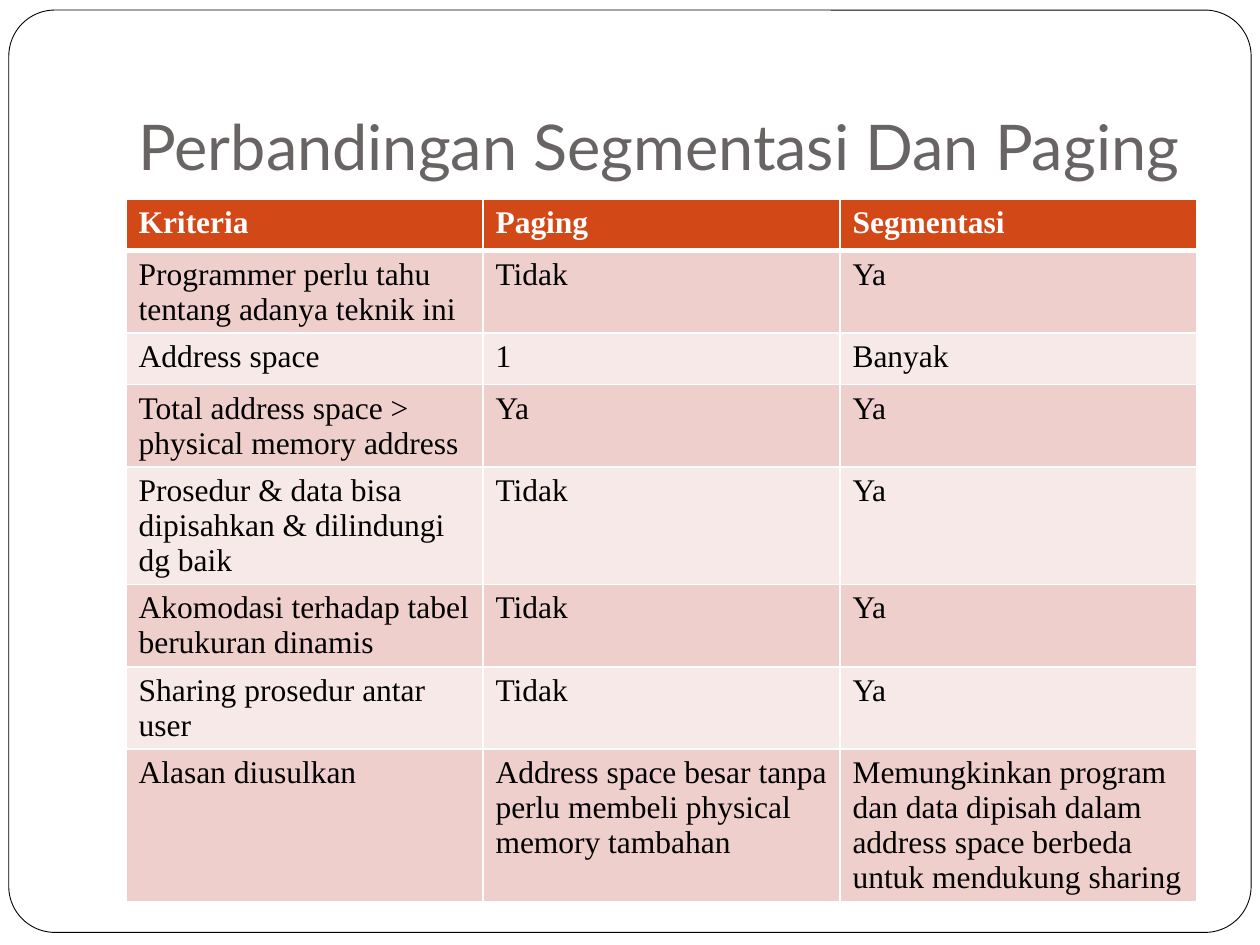
from dataclasses import dataclass

import lxml.etree
import pptx
import pptx.dml.color
import pptx.enum.shapes
import pptx.enum.text
import pptx.oxml.ns
import pptx.util
from pptx.util import Inches


@dataclass(frozen=True)
class Theme:
    paper: str = "FFFFFF"
    ink: str = "000000"
    heading: str = "696464"
    header_fill: str = "D34817"
    bands: tuple[str, str] = ("EFCFCC", "F7E9E8")
    title_font: str = "Lato"
    table_font: str = "Times New Roman"
    title_size: float = 36
    table_size: float = 18
    frame_line: float = 0.5
    rule: float = 1
    header_rule: float = 3


@dataclass(frozen=True)
class Criterion:
    name: str
    paging: str
    segmentation: str


@dataclass(frozen=True)
class CellStyle:
    fill: str
    ink: str
    bold: bool
    top_rule: float
    bottom_rule: float


THEME = Theme()
HEADER = Criterion("Kriteria", "Paging", "Segmentasi")
CRITERIA = [
    Criterion("Programmer perlu tahu tentang adanya teknik ini", "Tidak", "Ya"),
    Criterion("Address space", "1", "Banyak"),
    Criterion("Total address space > physical memory address", "Ya", "Ya"),
    Criterion("Prosedur & data bisa dipisahkan & dilindungi dg baik", "Tidak", "Ya"),
    Criterion("Akomodasi terhadap tabel berukuran dinamis", "Tidak", "Ya"),
    Criterion("Sharing prosedur antar user", "Tidak", "Ya"),
    Criterion(
        "Alasan diusulkan",
        "Address space besar tanpa perlu membeli physical memory tambahan",
        "Memungkinkan program dan data dipisah dalam address space berbeda "
        "untuk mendukung sharing",
    ),
]


def rgb(value: str) -> pptx.dml.color.RGBColor:
    return pptx.dml.color.RGBColor.from_string(value)


def add_run(paragraph, wording: str, font: str, size: float, color: str, bold: bool) -> None:
    run = paragraph.add_run()
    run.text = wording
    run.font.name = font
    run.font.size = pptx.util.Pt(size)
    run.font.color.rgb = rgb(color)
    run.font.bold = bold


def draw_frame(slide) -> None:
    frame = slide.shapes.add_shape(
        pptx.enum.shapes.MSO_SHAPE.ROUNDED_RECTANGLE,
        Inches(0.07), Inches(0.08), Inches(9.86), Inches(7.32),
    )
    frame.adjustments[0] = 0.05
    frame.shadow.inherit = False
    frame.fill.solid()
    frame.fill.fore_color.rgb = rgb(THEME.paper)
    frame.line.color.rgb = rgb(THEME.ink)
    frame.line.width = pptx.util.Pt(THEME.frame_line)
    frame.element.getparent().insert(2, frame.element)


def draw_title(slide, wording: str) -> None:
    title = slide.shapes.title
    title.left, title.top = Inches(1), Inches(0.3)
    title.width, title.height = Inches(8.5), Inches(1.25)
    body = title.text_frame
    body.word_wrap = True
    body.auto_size = pptx.enum.text.MSO_AUTO_SIZE.NONE
    body.vertical_anchor = pptx.enum.text.MSO_ANCHOR.BOTTOM
    body.margin_left = body.margin_right = body.margin_bottom = Inches(0.1)
    body.margin_top = Inches(0.05)
    paragraph = body.paragraphs[0]
    paragraph.alignment = pptx.enum.text.PP_ALIGN.LEFT
    add_run(paragraph, wording, THEME.title_font, THEME.title_size, THEME.heading, False)


def set_borders(cell, style: CellStyle) -> None:
    properties = cell._tc.get_or_add_tcPr()
    rules = {
        "lnL": THEME.rule,
        "lnR": THEME.rule,
        "lnT": style.top_rule,
        "lnB": style.bottom_rule,
    }
    for position, (side, width) in enumerate(rules.items()):
        border = lxml.etree.Element(
            pptx.oxml.ns.qn(f"a:{side}"), w=str(pptx.util.Pt(width))
        )
        fill = lxml.etree.SubElement(border, pptx.oxml.ns.qn("a:solidFill"))
        lxml.etree.SubElement(fill, pptx.oxml.ns.qn("a:srgbClr"), val=THEME.paper)
        properties.insert(position, border)


def row_style(index: int) -> CellStyle:
    if index == 0:
        return CellStyle(THEME.header_fill, THEME.paper, True, THEME.rule, THEME.header_rule)
    top_rule = THEME.header_rule if index == 1 else THEME.rule
    return CellStyle(THEME.bands[(index - 1) % 2], THEME.ink, False, top_rule, THEME.rule)


def draw_cell(cell, wording: str, style: CellStyle) -> None:
    cell.fill.solid()
    cell.fill.fore_color.rgb = rgb(style.fill)
    set_borders(cell, style)
    add_run(
        cell.text_frame.paragraphs[0], wording,
        THEME.table_font, THEME.table_size, style.ink, style.bold,
    )


def draw_comparison(slide, criteria: list[Criterion]) -> None:
    row_height = Inches(0.41)
    comparison = slide.shapes.add_table(
        len(criteria), 3, Inches(1), Inches(1.58),
        Inches(8.5), row_height * len(criteria),
    ).table
    for index, criterion in enumerate(criteria):
        comparison.rows[index].height = row_height
        wordings = (criterion.name, criterion.paging, criterion.segmentation)
        for column, wording in enumerate(wordings):
            draw_cell(comparison.cell(index, column), wording, row_style(index))


def main() -> None:
    deck = pptx.Presentation()
    deck.slide_width, deck.slide_height = Inches(10), Inches(7.5)
    slide = deck.slides.add_slide(deck.slide_layouts.get_by_name("Title Only"))
    draw_frame(slide)
    draw_title(slide, "Perbandingan Segmentasi Dan Paging")
    draw_comparison(slide, [HEADER, *CRITERIA])
    deck.save("out.pptx")


if __name__ == "__main__":
    main()
